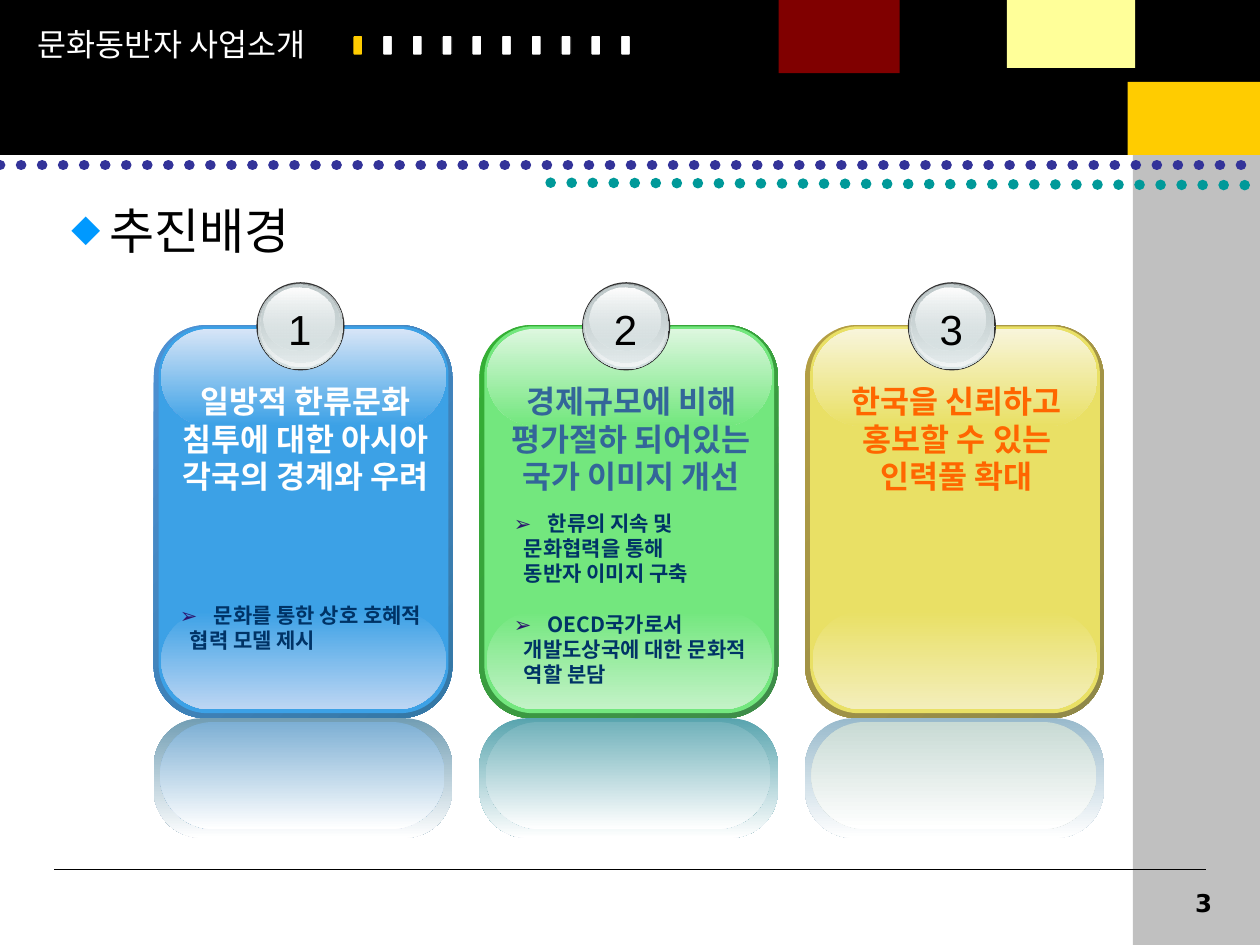
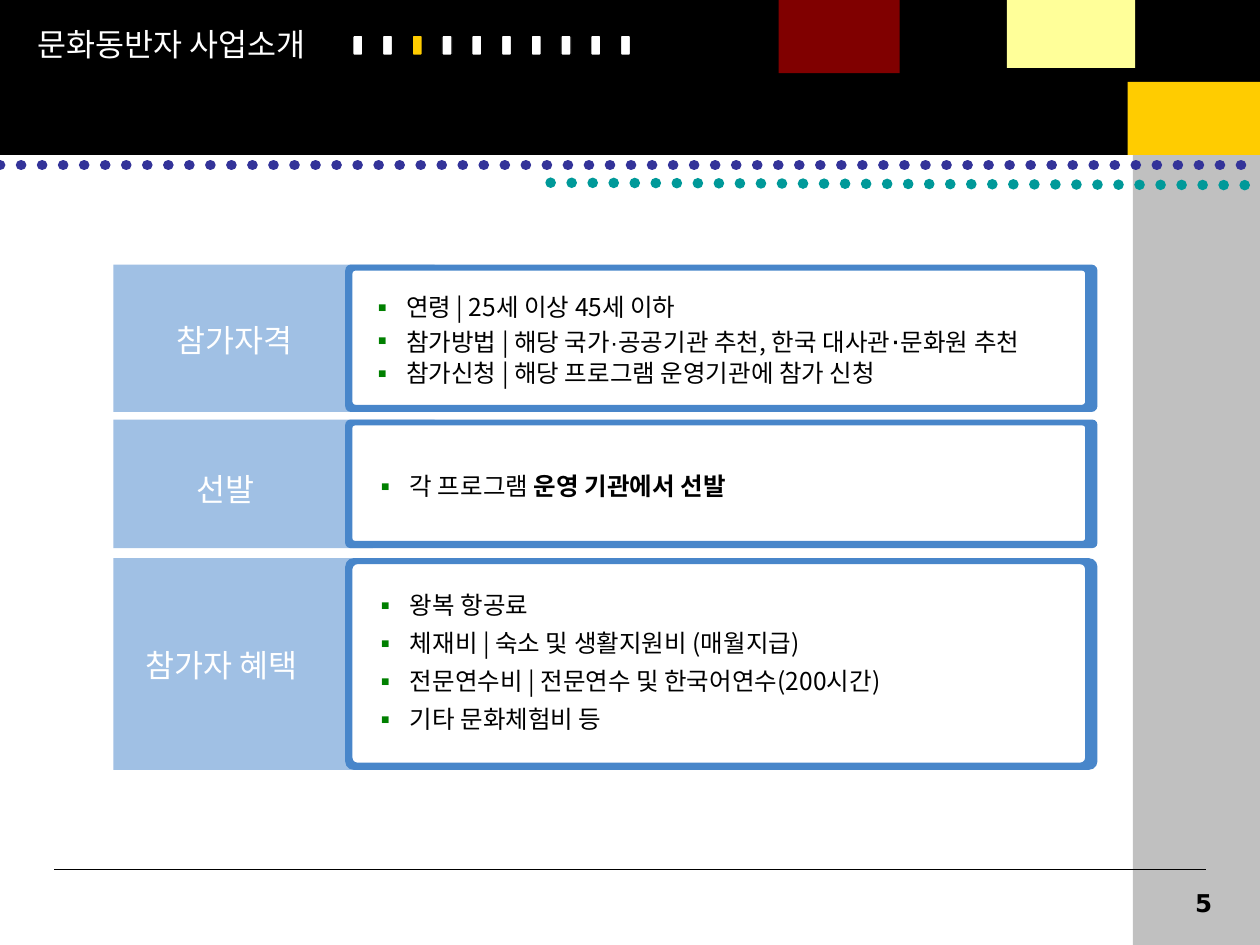
import dataclasses

import lxml.etree
import pptx
import pptx.dml.color
import pptx.enum.dml
import pptx.enum.shapes
import pptx.enum.text
import pptx.oxml.ns
import pptx.util

COLUMNS = 100
ROWS = 75
KOREAN = "Noto Sans CJK KR"
LATIN = "Arial"
LEADING = 1.2
BLACK, WHITE, GOLD = "000000", "FFFFFF", "FFCC00"
SKY, BLUE, GREEN, NAVY, VIOLET = "A0C0E4", "4886CA", "008000", "003366", "2C166E"
SHAPES = pptx.enum.shapes.MSO_SHAPE
ALIGN = pptx.enum.text.PP_ALIGN


def rgb(value):
    return pptx.dml.color.RGBColor.from_string(value)


def add_xml(parent, tag, **attributes):
    child = lxml.etree.SubElement(parent, pptx.oxml.ns.qn(tag))
    for key, value in attributes.items():
        child.set(key, str(value))
    return child


@dataclasses.dataclass
class Line:
    content: object
    bullet: str = ""
    bullet_color: str = BLACK
    bullet_share: int = 100
    margin: float = 0
    before: float = 0


class Deck:
    def __init__(self):
        self.presentation = pptx.Presentation()
        self.presentation.slide_width = pptx.util.Inches(10)
        self.presentation.slide_height = pptx.util.Inches(7.5)
        self.slide = None

    def x(self, columns):
        return round(self.presentation.slide_width * columns / COLUMNS)

    def y(self, rows):
        return round(self.presentation.slide_height * rows / ROWS)

    def box(self, left, top, width, height):
        return self.x(left), self.y(top), self.x(width), self.y(height)

    def paint(self, shape, fill, line=None, weight=0.75):
        shape.shadow.inherit = False
        if isinstance(fill, str):
            shape.fill.solid()
            shape.fill.fore_color.rgb = rgb(fill)
        else:
            self.blend(shape, *fill)
        if line:
            shape.line.color.rgb = rgb(line)
            shape.line.width = pptx.util.Pt(weight)
        else:
            shape.line.fill.background()

    def blend(self, shape, start, end, angle=90, opacity=(100, 100)):
        shape.fill.gradient()
        shape.fill.gradient_angle = 360 - angle
        for stop, color in zip(shape.fill.gradient_stops, (start, end)):
            stop.color.rgb = rgb(color)
        stops = shape._element.spPr.iter(pptx.oxml.ns.qn("a:srgbClr"))
        for color, share in zip(list(stops), opacity):
            if share < 100:
                add_xml(color, "a:alpha", val=share * 1000)

    def shape(self, kind, place, fill, line=None, weight=0.75, rounding=None):
        shape = self.slide.shapes.add_shape(kind, *self.box(*place))
        if rounding is not None:
            shape.adjustments[0] = rounding
        self.paint(shape, fill, line, weight)

    def rect(self, place, fill):
        self.shape(SHAPES.RECTANGLE, place, fill)

    def rounded(self, place, rounding, fill, line=None, weight=0.75):
        self.shape(SHAPES.ROUNDED_RECTANGLE, place, fill, line, weight, rounding)

    def outline(self, points, fill):
        corners = [(self.x(column), self.y(row)) for column, row in points]
        builder = self.slide.shapes.build_freeform(*corners[0])
        builder.add_line_segments(corners[1:], close=True)
        self.paint(builder.convert_to_shape(), fill)

    def line(self, start, end, color, weight=0.75, dotted=False):
        line = self.slide.shapes.add_connector(
            pptx.enum.shapes.MSO_CONNECTOR.STRAIGHT,
            self.x(start[0]), self.y(start[1]), self.x(end[0]), self.y(end[1]))
        line.line.color.rgb = rgb(color)
        line.line.width = pptx.util.Pt(weight)
        if dotted:
            line.line.dash_style = pptx.enum.dml.MSO_LINE.ROUND_DOT
            line.line._ln.set("cap", "rnd")
        add_xml(line._element.spPr, "a:effectLst")

    def text(self, place, lines, size, color, bold=False, font=KOREAN,
             align=ALIGN.LEFT, leading=LEADING):
        frame = self.slide.shapes.add_textbox(*self.box(*place)).text_frame
        frame.word_wrap = True
        frame.margin_top = pptx.util.Inches(0.07)
        for index, line in enumerate(lines):
            paragraph = frame.add_paragraph() if index else frame.paragraphs[0]
            self.add_words(paragraph, line.content)
            self.indent(paragraph, line)
            paragraph.alignment = align
            paragraph.line_spacing = pptx.util.Pt(round(size * leading, 1))
            if line.before:
                paragraph.space_before = pptx.util.Pt(line.before)
            paragraph.font.name = font
            paragraph.font.size = pptx.util.Pt(size)
            paragraph.font.bold = bold
            paragraph.font.color.rgb = rgb(color)
            add_xml(paragraph.font._element, "a:ea", typeface=font)

    def add_words(self, paragraph, content):
        if isinstance(content, str):
            paragraph.text = content
            return
        for words, style in content:
            run = paragraph.add_run()
            run.text = words
            run.font.name = style.get("name")
            run.font.size = style.get("size")
            run.font.bold = style.get("bold")

    def indent(self, paragraph, line):
        properties = paragraph._p.get_or_add_pPr()
        properties.set("marL", str(self.x(line.margin)))
        if line.bullet:
            properties.set("indent", str(-self.x(line.margin)))
            color = add_xml(properties, "a:buClr")
            add_xml(color, "a:srgbClr", val=line.bullet_color)
            add_xml(properties, "a:buSzPct", val=line.bullet_share * 1000)
            add_xml(properties, "a:buFont", typeface=KOREAN)
            add_xml(properties, "a:buChar", char=line.bullet)

    def page(self, number, current_step):
        self.slide = self.presentation.slides.add_slide(
            self.presentation.slide_layouts[6])
        self.rect((89.9, 10.7, 10.1, 64.3), "C0C0C0")
        self.line((4.3, 69), (95.7, 69), BLACK)
        self.rect((0, 0, COLUMNS, 12.3), BLACK)
        self.rect((61.8, 0, 9.6, 5.8), "800000")
        self.rect((79.9, 0, 10.2, 5.4), "FFFF99")
        self.rect((89.5, 6.5, 10.5, 5.8), GOLD)
        self.line((0, 13.1), (COLUMNS, 13.1), "333399", 6, True)
        self.line((43.7, 14.5), (COLUMNS, 14.7), "009999", 6, True)
        self.text((81.1, 69.8, 16.1, 5.2), [Line(str(number))], 14, BLACK,
                  True, "DejaVu Sans", ALIGN.RIGHT)
        self.text((2, 1.3, 25.3, 4), [Line("문화동반자 사업소개")], 18, WHITE)
        for step in range(10):
            self.rounded((28 + 2.36 * step, 2.8, 0.8, 1.6), 0.17,
                         GOLD if step == current_step else WHITE, BLACK)

    def badge(self, left, number):
        layers = [
            (0, 22.4, 7, 7, "333333"),
            (0.1, 22.5, 6.8, 6.8, ("99A1A2", "D6E1E2")),
            (0.2, 22.5, 6.6, 6.6, ("D6E1E2", "F2F5F5", 90, (0, 100))),
            (0.3, 22.6, 6.3, 6.2, ("C1CBCC", "D6E1E2", 90, (100, 48))),
            (0.6, 22.8, 5.6, 5, ("FFFFFF", "D6E1E2", 90, (100, 38))),
        ]
        for inset, top, width, height, fill in layers:
            self.shape(SHAPES.OVAL, (left + inset, top, width, height), fill)
        self.text((left + 1.5, 23.4, 3.9, 5), [Line(str(number))], 24, BLACK,
                  font=LATIN, align=ALIGN.CENTER)

    def card(self, left, number, title, title_color, rim, body, shine, mirror):
        self.rounded((left, 25.8, 23.7, 31.2), 0.175, (*rim, 45))
        self.rounded((left + 0.4, 25.9, 23, 30.7), 0.167, body)
        self.rounded((left + 0.6, 48.5, 22.6, 7.8), 0.5, (body, shine[1]))
        self.rounded((left + 0.6, 26.1, 22.6, 7.7), 0.5, (shine[0], body))
        self.rounded((left, 57, 23.7, 9.5), 0.4, (mirror[0], WHITE))
        self.rounded((left + 0.5, 57.3, 22.6, 8.5), 0.5, (mirror[1], WHITE))
        self.badge(left + 8.15, number)
        self.text((left + 0.4, 29.6, 23.3, 13), [Line(title)], 18, title_color,
                  True, align=ALIGN.CENTER)

    def topic(self, top, height, label, label_left, label_top):
        notch, heel, bottom = top + 0.12 * height, top + 0.93 * height, top + height
        self.outline([(9, top), (34.5, top), (34.6, notch), (29.6, notch),
                      (29.8, heel), (29.6, heel), (29.6, bottom), (9, bottom)], SKY)
        self.rounded((27.4, top, 59.7, height), 0.04, BLUE)
        self.rounded((27.9, top + 0.4, 58.3, height - 0.9), 0.03, WHITE, BLUE, 1)
        self.text((label_left, label_top, 17, 4), [Line(label)], 18, WHITE)


def background_slide(deck):
    deck.page(3, 0)
    deck.text((4.7, 15.2, 30, 6.3), [Line("추진배경", "◆", "0099FF", 60, 3)], 28, BLACK)
    cards = [
        ("일방적 한류문화\v침투에 대한 아시아\v각국의 경계와 우려", WHITE,
         ("4E91D4", "3477A4"), "3CA1E6", ("D7E5F7", "BDD6F3"), ("729EB4", "7DAFD4")),
        ("경제규모에 비해\v평가절하 되어있는\v국가 이미지 개선", "336699",
         ("34B034", "3F8B4A"), "73E77E", ("DDF7DF", "C3F2C7"), ("58A4AE", "72B2BB")),
        ("한국을 신뢰하고\v홍보할 수 있는\v인력풀 확대", "FF6600",
         ("B59F43", "8F8849"), "E9E065", ("F8F5DB", "F3EEBB"), ("99BACC", "C8DAD4")),
    ]
    for index, card in enumerate(cards):
        deck.card(12.2 + 25.85 * index, index + 1, *card)

    def goal(first, *rest, before=0):
        return [Line(first, "➢", VIOLET, margin=2.7, before=before),
                *(Line(words, margin=0.8) for words in rest)]

    deck.text((13.3, 47.1, 23, 5), goal("문화를 통한 상호 호혜적", "협력 모델 제시"),
              12, NAVY, True)
    deck.text((39.8, 39.8, 30, 15),
              goal("한류의 지속 및", "문화협력을 통해", "동반자 이미지 구축")
              + goal("OECD국가로서", "개발도상국에 대한 문화적", "역할 분담", before=14.4),
              12, NAVY, True)


def participation_slide(deck):
    deck.page(5, 2)
    deck.topic(21, 11.7, "참가자격", 13, 24.8)
    deck.topic(33.3, 10.2, "선발", 14.6, 36.6)
    deck.topic(44.3, 16.8, "참가자 혜택", 10.6, 50.6)

    def item(content, before=0):
        return Line(content, "▪", GREEN, margin=2.85, before=before)

    method = [("참가방법 | 해당 국가", {}), ("·", {"name": LATIN}),
              ("공공기관 추천, 한국 대사관", {}),
              ("·", {"name": LATIN, "size": pptx.util.Pt(18)}), ("문화원 추천", {})]
    deck.text((28.4, 22.5, 68.5, 8.8),
              [item("연령 | 25세 이상 45세 이하"), item(method, 4),
               item("참가신청 | 해당 프로그램 운영기관에 참가 신청")], 14, BLACK)
    deck.text((28.7, 36.7, 50, 3.3),
              [item([("각 프로그램 ", {}), ("운영 기관에서 선발", {"bold": True})])],
              14, BLACK)
    benefits = ["왕복 항공료", "체재비 | 숙소 및 생활지원비 (매월지급)",
                "전문연수비 | 전문연수 및 한국어연수(200시간)", "기타 문화체험비 등"]
    deck.text((28.7, 45.4, 50, 13.3), [item(benefit) for benefit in benefits],
              14, BLACK, leading=1.3 * LEADING)


def main():
    deck = Deck()
    background_slide(deck)
    participation_slide(deck)
    deck.presentation.save("out.pptx")


if __name__ == "__main__":
    main()
